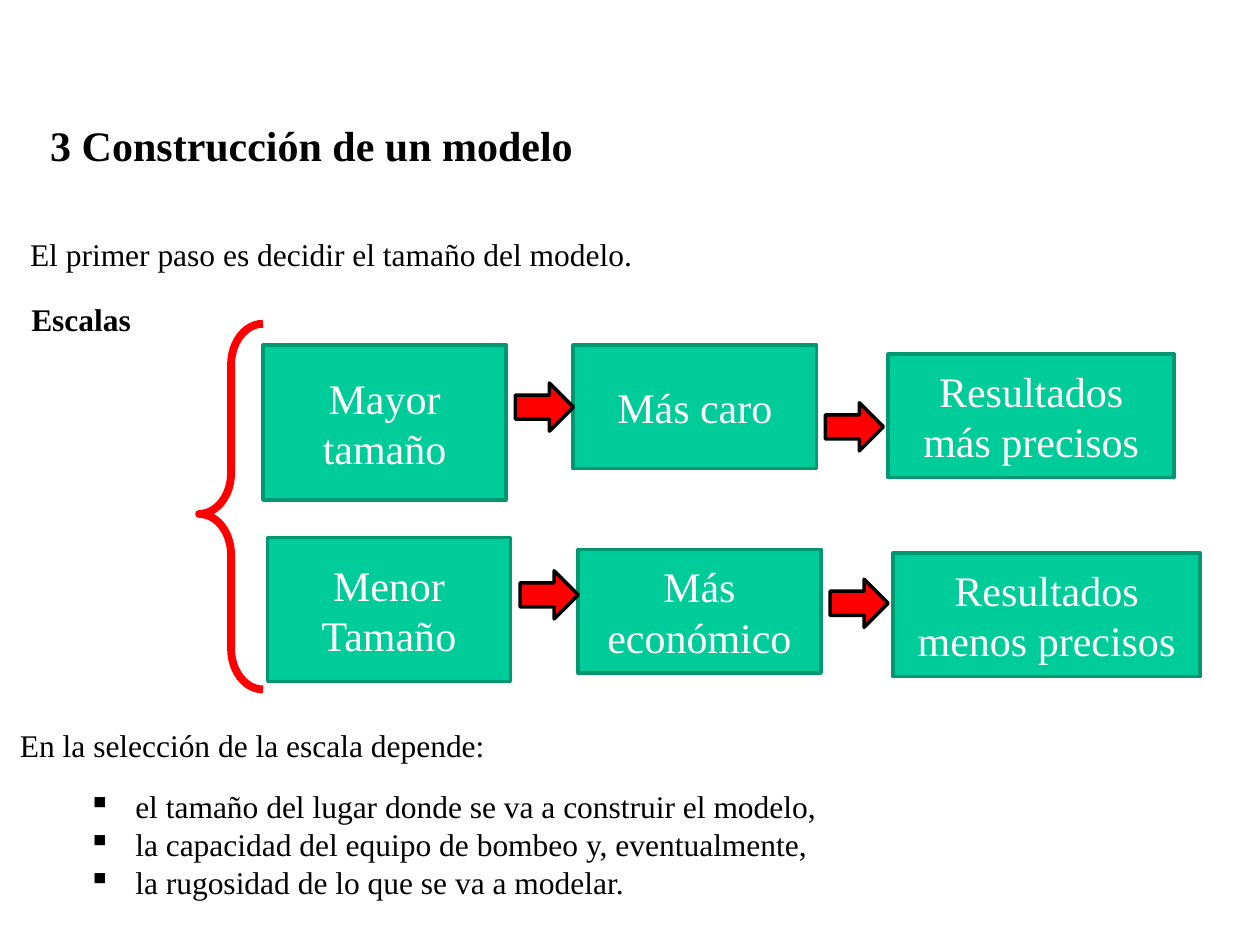
from typing import NamedTuple

import lxml.etree
import pptx
import pptx.dml.color
import pptx.enum.shapes
import pptx.enum.text
import pptx.oxml.ns
import pptx.presentation
import pptx.slide
import pptx.util

Pt = pptx.util.Pt
RGBColor = pptx.dml.color.RGBColor
Shapes = pptx.enum.shapes.MSO_SHAPE

BLACK = RGBColor(0x00, 0x00, 0x00)
WHITE = RGBColor(0xFF, 0xFF, 0xFF)
GREEN = RGBColor(0x00, 0xCC, 0x99)
DARK_GREEN = RGBColor(0x00, 0x97, 0x71)
RED = RGBColor(0xFF, 0x00, 0x00)

FONT = "Times New Roman"
BODY = {"name": FONT, "size": Pt(18), "bold": False}
SUBHEADING = {**BODY, "bold": True}
HEADING = {**SUBHEADING, "size": Pt(24)}
STEP = {**BODY, "size": Pt(24)}

STEP_WIDTH = 139
STEP_HEIGHT = 70.6
ARROW_WIDTH, ARROW_HEIGHT = 33.2, 27.5


class Box(NamedTuple):
    left: float
    top: float
    width: float
    height: float

    def lengths(self) -> list[pptx.util.Length]:
        return [Pt(value) for value in self]


class Step(NamedTuple):
    label: str
    box: Box


class Passage(NamedTuple):
    lines: list[str]
    box: Box
    style: dict
    margin: float = 0
    bullet: str = ""
    wrap: bool = True


STEPS = [
    Step("Mayor tamaño", Box(150.3, 197.2, STEP_WIDTH, 88.6)),
    Step("Más caro", Box(327.6, 197.2, STEP_WIDTH, STEP_HEIGHT)),
    Step("Resultados más precisos", Box(507.6, 202.3, 163.4, STEP_HEIGHT)),
    Step("Menor Tamaño", Box(152.8, 307.3, STEP_WIDTH, 82.1)),
    Step("Más económico", Box(330.2, 314, STEP_WIDTH, STEP_HEIGHT)),
    Step("Resultados menos precisos", Box(510.2, 316.1, 175.7, STEP_HEIGHT)),
]
ARROW_CORNERS = [(294.5, 218.9), (471.6, 230.2), (297.2, 326.2), (474.3, 331)]
BRACE = Box(113.8, 185, 36.5, 209)

PASSAGES = [
    Passage(["El primer paso es decidir el tamaño del modelo."],
            Box(10.1, 131, 686.2, 29), BODY),
    Passage(["3 Construcción de un modelo"], Box(21.6, 64.8, 668.9, 36.5), HEADING),
    Passage(["Escalas"], Box(-25.2, 167.8, 113, 29), SUBHEADING, margin=36, wrap=False),
    Passage(
        [
            "el tamaño del lugar donde se va a construir el modelo,",
            "la capacidad del equipo de bombeo y, eventualmente,",
            "la rugosidad de lo que se va a modelar.",
        ],
        Box(43.2, 446.4, 619.9, 72.7), BODY, margin=27, bullet="▪",
    ),
    Passage(["En la selección de la escala depende:"], Box(4.3, 411.1, 686.2, 29), BODY),
]


def apply_font(font, style: dict, color: RGBColor) -> None:
    for attribute, value in style.items():
        setattr(font, attribute, value)
    font.color.rgb = color


def add_passage(slide: pptx.slide.Slide, passage: Passage) -> None:
    frame = slide.shapes.add_textbox(*passage.box.lengths()).text_frame
    frame.word_wrap = passage.wrap
    frame.auto_size = pptx.enum.text.MSO_AUTO_SIZE.SHAPE_TO_FIT_TEXT
    frame.text = "\n".join(passage.lines)
    for paragraph in frame.paragraphs:
        properties = paragraph._p.get_or_add_pPr()
        if passage.margin:
            properties.set("marL", str(Pt(passage.margin)))
        if passage.bullet:
            properties.set("indent", str(-Pt(passage.margin)))
            mark = lxml.etree.SubElement(properties, pptx.oxml.ns.qn("a:buChar"))
            mark.set("char", passage.bullet)
        for run in paragraph.runs:
            apply_font(run.font, passage.style, BLACK)


def add_outlined(slide: pptx.slide.Slide, kind: Shapes, box: Box,
                 line: RGBColor, weight: float, fill: RGBColor | None = None):
    """Add a preset shape without shadow; no fill colour leaves it hollow."""
    shape = slide.shapes.add_shape(kind, *box.lengths())
    shape.shadow.inherit = False
    if fill is None:
        shape.fill.background()
    else:
        shape.fill.solid()
        shape.fill.fore_color.rgb = fill
    shape.line.color.rgb = line
    shape.line.width = Pt(weight)
    return shape


def add_step(slide: pptx.slide.Slide, step: Step) -> None:
    frame = add_outlined(slide, Shapes.RECTANGLE, step.box, DARK_GREEN, 2, GREEN).text_frame
    frame.word_wrap = True
    frame.vertical_anchor = pptx.enum.text.MSO_ANCHOR.MIDDLE
    frame.text = step.label
    paragraph = frame.paragraphs[0]
    paragraph.alignment = pptx.enum.text.PP_ALIGN.CENTER
    apply_font(paragraph.runs[0].font, STEP, WHITE)


def build() -> pptx.presentation.Presentation:
    presentation = pptx.Presentation()
    presentation.slide_width, presentation.slide_height = Pt(720), Pt(540)
    slide = presentation.slides.add_slide(presentation.slide_layouts[6])
    for passage in PASSAGES:
        add_passage(slide, passage)
    for step in STEPS:
        add_step(slide, step)
    for left, top in ARROW_CORNERS:
        add_outlined(slide, Shapes.RIGHT_ARROW,
                     Box(left, top, ARROW_WIDTH, ARROW_HEIGHT), BLACK, 2, RED)
    brace = add_outlined(slide, Shapes.LEFT_BRACE, BRACE, RED, 4.5)
    brace.adjustments[0] = 0.64
    brace.adjustments[1] = 0.52
    return presentation


if __name__ == "__main__":
    build().save("out.pptx")
